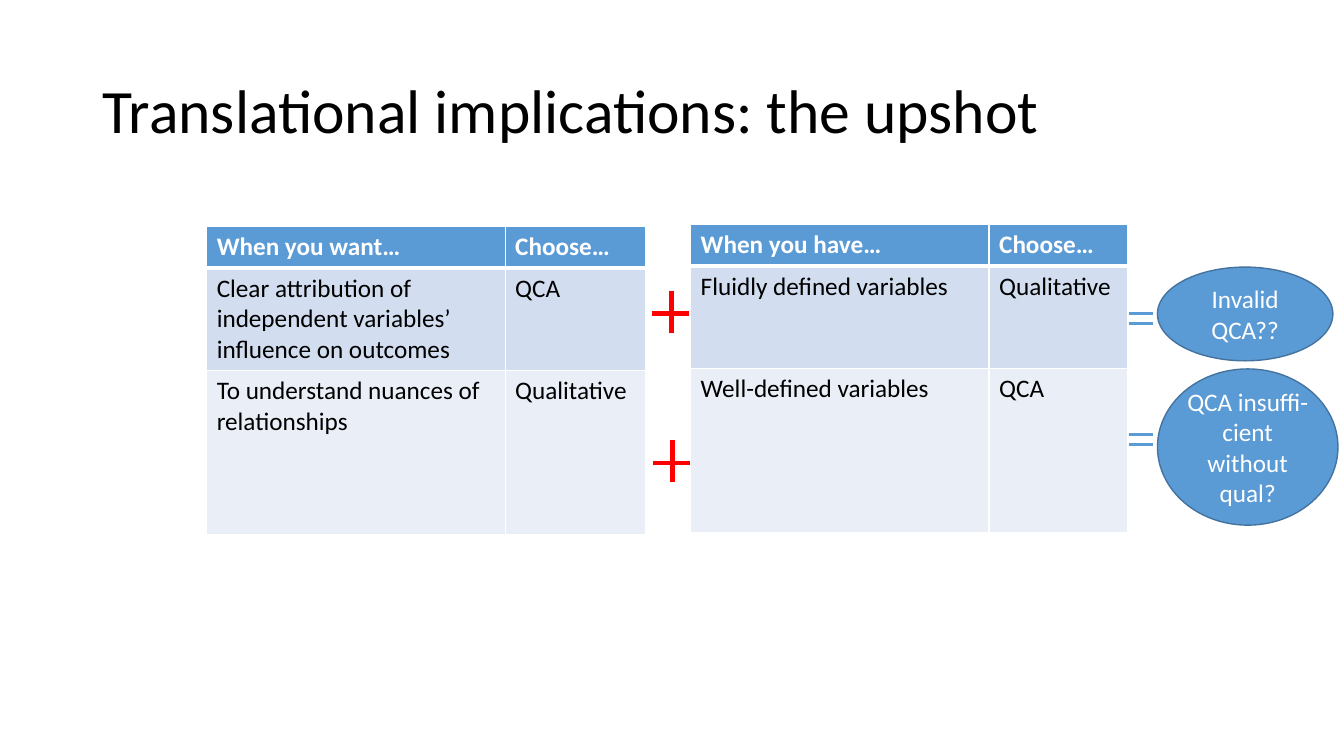
from dataclasses import dataclass

from lxml import etree
from pptx import Presentation
from pptx import util as u
from pptx.dml.color import RGBColor
from pptx.enum import shapes, text
from pptx.oxml import parse_xml
from pptx.oxml.ns import nsdecls, qn

PX = 9144  # 100 px to the inch


@dataclass(frozen=True)
class Theme:
    font: str = "Calibri"
    title: int = 44
    body: int = 18
    black: str = "000000"
    white: str = "FFFFFF"
    blue: str = "5B9BD5"
    edge: str = "43739E"
    red: str = "FF0000"
    bands: tuple[str, ...] = ("5B9BD5", "D2DEEF", "EAEFF7")


@dataclass(frozen=True)
class Grid:
    x: int
    y: int
    cols: tuple[int, ...]
    rows: tuple[tuple[str, str], ...]


@dataclass(frozen=True)
class Bubble:
    x: int
    y: int
    w: int
    h: int
    label: str


@dataclass(frozen=True)
class Sign:
    x: int
    y: int


THEME = Theme()
TITLE = "Translational implications: the upshot"
HEIGHTS = (41, 102, 162)
GRIDS = (
    Grid(205, 225, (296, 139), (
        ("When you want…", "Choose…"),
        ("Clear attribution of independent variables’ influence on outcomes", "QCA"),
        ("To understand nuances of relationships", "Qualitative"))),
    Grid(685, 223, (296, 137), (
        ("When you have…", "Choose…"),
        ("Fluidly defined variables", "Qualitative"),
        ("Well-defined variables", "QCA"))),
)
PLUSES = (Sign(647, 311), Sign(648, 459))
EQUALS = (Sign(1120, 311), Sign(1120, 431))
BUBBLES = (
    Bubble(1148, 265, 174, 93, "Invalid QCA??"),
    Bubble(1148, 366, 179, 155, "QCA insuffi-cient without qual?"),
)


def px(*sizes: int) -> list[int]:
    return [u.Emu(size * PX) for size in sizes]


def rgb(code: str) -> RGBColor:
    return RGBColor.from_string(code)


def write(frame, words: str, size: int, color: str, bold: bool = False) -> None:
    frame.word_wrap = True
    frame.text = words
    font = frame.paragraphs[0].runs[0].font
    font.name, font.size, font.bold = THEME.font, u.Pt(size), bold
    font.color.rgb = rgb(color)


def border(cell, head: bool) -> None:
    props = cell._tc.get_or_add_tcPr()
    for i, side in enumerate("LRTB"):
        width = u.Pt(3 if head and side == "B" else 1)
        props.insert(i, parse_xml(
            f'<a:ln{side} {nsdecls("a")} w="{width}"><a:solidFill>'
            f'<a:srgbClr val="{THEME.white}"/></a:solidFill></a:ln{side}>'))


def add_grid(slide, grid: Grid) -> None:
    box = px(grid.x, grid.y, sum(grid.cols), sum(HEIGHTS))
    table = slide.shapes.add_table(len(grid.rows), len(grid.cols), *box).table
    for col, width in zip(table.columns, px(*grid.cols)):
        col.width = width
    for r, row in enumerate(grid.rows):
        table.rows[r].height = px(HEIGHTS[r])[0]
        head = r == 0
        for c, words in enumerate(row):
            cell = table.cell(r, c)
            color = THEME.white if head else THEME.black
            write(cell.text_frame, words, THEME.body, color, head)
            cell.fill.solid()
            cell.fill.fore_color.rgb = rgb(THEME.bands[r])
            # The rule under the first row also tops the second
            border(cell, head)
            if r == 1:
                cell._tc.tcPr.find(qn("a:lnT")).set("w", str(u.Pt(3)))


def add_line(slide, x1: int, y1: int, x2: int, y2: int, color: str, width: float) -> None:
    line = slide.shapes.add_connector(
        shapes.MSO_CONNECTOR.STRAIGHT, *px(x1, y1, x2, y2))
    line.line.color.rgb = rgb(color)
    line.line.width = u.Pt(width)
    etree.SubElement(line._element.spPr, qn("a:effectLst"))


def add_plus(slide, sign: Sign) -> None:
    mid = sign.x + 19
    add_line(slide, mid, sign.y - 22, mid, sign.y + 19, THEME.red, 3)
    add_line(slide, sign.x, sign.y, sign.x + 36, sign.y, THEME.red, 3)


def add_equal(slide, sign: Sign) -> None:
    for y in (sign.y, sign.y + 10):
        add_line(slide, sign.x, y, sign.x + 24, y, THEME.blue, 2.25)


def add_bubble(slide, bubble: Bubble) -> None:
    oval = slide.shapes.add_shape(
        shapes.MSO_SHAPE.OVAL, *px(bubble.x, bubble.y, bubble.w, bubble.h))
    oval.shadow.inherit = False
    oval.fill.solid()
    oval.fill.fore_color.rgb = rgb(THEME.blue)
    oval.line.color.rgb = rgb(THEME.edge)
    oval.line.width = u.Pt(1)
    frame = oval.text_frame
    write(frame, bubble.label, THEME.body, THEME.white)
    # No insets: the label wraps to fewer lines and clears the outline
    frame.margin_left = frame.margin_right = 0
    frame.margin_top = frame.margin_bottom = 0
    frame.vertical_anchor = text.MSO_ANCHOR.MIDDLE
    frame.paragraphs[0].alignment = text.PP_ALIGN.CENTER


def add_title(slide) -> None:
    frame = slide.shapes.add_textbox(*px(92, 40, 1150, 145)).text_frame
    write(frame, TITLE, THEME.title, THEME.black)
    frame.vertical_anchor = text.MSO_ANCHOR.MIDDLE
    frame.paragraphs[0].line_spacing = 0.9


def main() -> None:
    deck = Presentation()
    deck.slide_width, deck.slide_height = px(1333, 750)
    slide = deck.slides.add_slide(deck.slide_layouts[6])

    # Title and the two tables
    add_title(slide)
    for grid in GRIDS:
        add_grid(slide, grid)

    # Signs and outcomes
    for sign in PLUSES:
        add_plus(slide, sign)
    for bubble in BUBBLES:
        add_bubble(slide, bubble)
    for sign in EQUALS:
        add_equal(slide, sign)

    deck.save("out.pptx")


if __name__ == "__main__":
    main()
